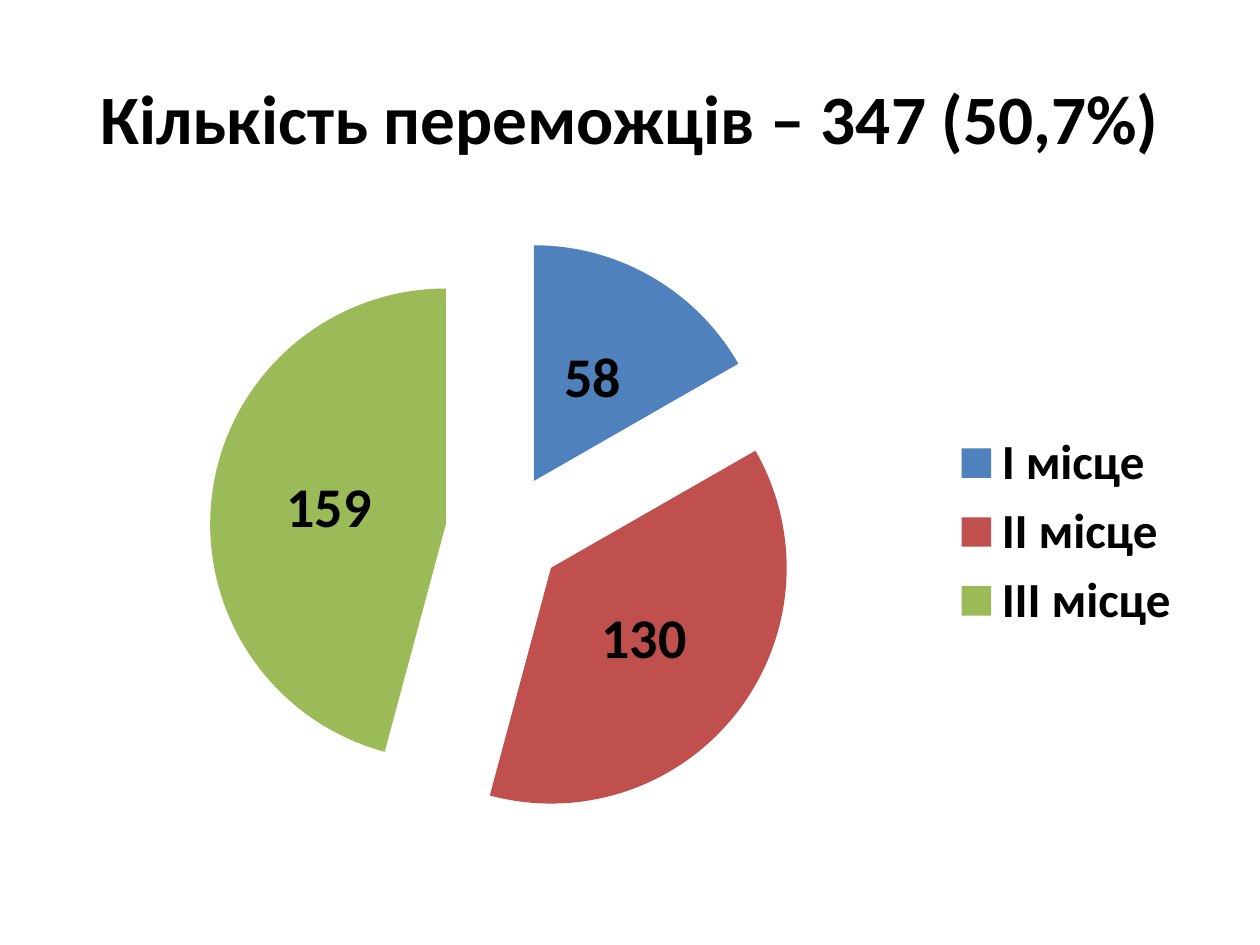
from lxml.etree import Element
from pptx import Presentation
from pptx.chart.data import CategoryChartData
from pptx.dml.color import RGBColor
from pptx.enum.chart import XL_CHART_TYPE, XL_LABEL_POSITION, XL_LEGEND_POSITION
from pptx.enum.text import MSO_ANCHOR, PP_ALIGN
from pptx.oxml.ns import qn
from pptx.util import Pt

SCALE = 914400 / 126  # EMU per px
BLACK = RGBColor(0x00, 0x00, 0x00)
BLUE = RGBColor(0x4F, 0x81, 0xBD)
RED = RGBColor(0xC0, 0x50, 0x4D)
GREEN = RGBColor(0x9B, 0xBB, 0x59)


def px(n):
    return round(n * SCALE)


class Deck:
    face = "Calibri"

    def __init__(self, wide, high):
        self.prs = Presentation()
        self.prs.slide_width, self.prs.slide_height = px(wide), px(high)
        self.slide = self.prs.slides.add_slide(self.prs.slide_layouts[5])

    def style(self, font, size, bold=True):
        look = {"name": self.face, "size": Pt(size), "bold": bold}
        for key, value in look.items():
            setattr(font, key, value)
        font.color.rgb = BLACK

    def title(self, text, box, size):
        shape = self.slide.shapes.title
        for key, value in zip(("left", "top", "width", "height"), box):
            setattr(shape, key, px(value))
        frame = shape.text_frame
        frame.text = text
        frame.word_wrap = True
        frame.vertical_anchor = MSO_ANCHOR.MIDDLE
        para = frame.paragraphs[0]
        para.alignment = PP_ALIGN.CENTER
        self.style(para.runs[0].font, size)

    def pie(self, name, parts, box, gap):
        data = CategoryChartData()
        data.categories = [label for label, _, _ in parts]
        data.add_series(name, [value for _, value, _ in parts])
        chart = self.slide.shapes.add_chart(
            XL_CHART_TYPE.PIE, *map(px, box), data).chart
        self.style(chart.font, 10, False)
        chart.has_title = False

        # Legend
        chart.has_legend = True
        chart.legend.position = XL_LEGEND_POSITION.RIGHT
        chart.legend.include_in_layout = False
        self.style(chart.legend.font, 28)

        # Slices, pulled apart
        plot = chart.plots[0]
        plot.vary_by_categories = True
        series = plot.series[0]
        for i, (_, _, color) in enumerate(parts):
            fill = series.points[i].format.fill
            fill.solid()
            fill.fore_color.rgb = color
        pull = Element(qn("c:explosion"), val=str(gap))
        series._element.find(qn("c:dPt")).addprevious(pull)

        # Value labels
        labels = series.data_labels
        labels.show_value = True
        labels.position = XL_LABEL_POSITION.CENTER
        self.style(labels.font, 32)


def main():
    deck = Deck(1260, 945)
    deck.title("Кількість переможців – 347 (50,7%)", (63, 38, 1134, 157), 39.6)
    places = [
        ("І місце", 58, BLUE),
        ("ІІ місце", 130, RED),
        ("ІІІ місце", 159, GREEN),
    ]
    deck.pie("Series 1", places, (63, 220, 1134, 624), 25)
    deck.prs.save("out.pptx")


if __name__ == "__main__":
    main()
